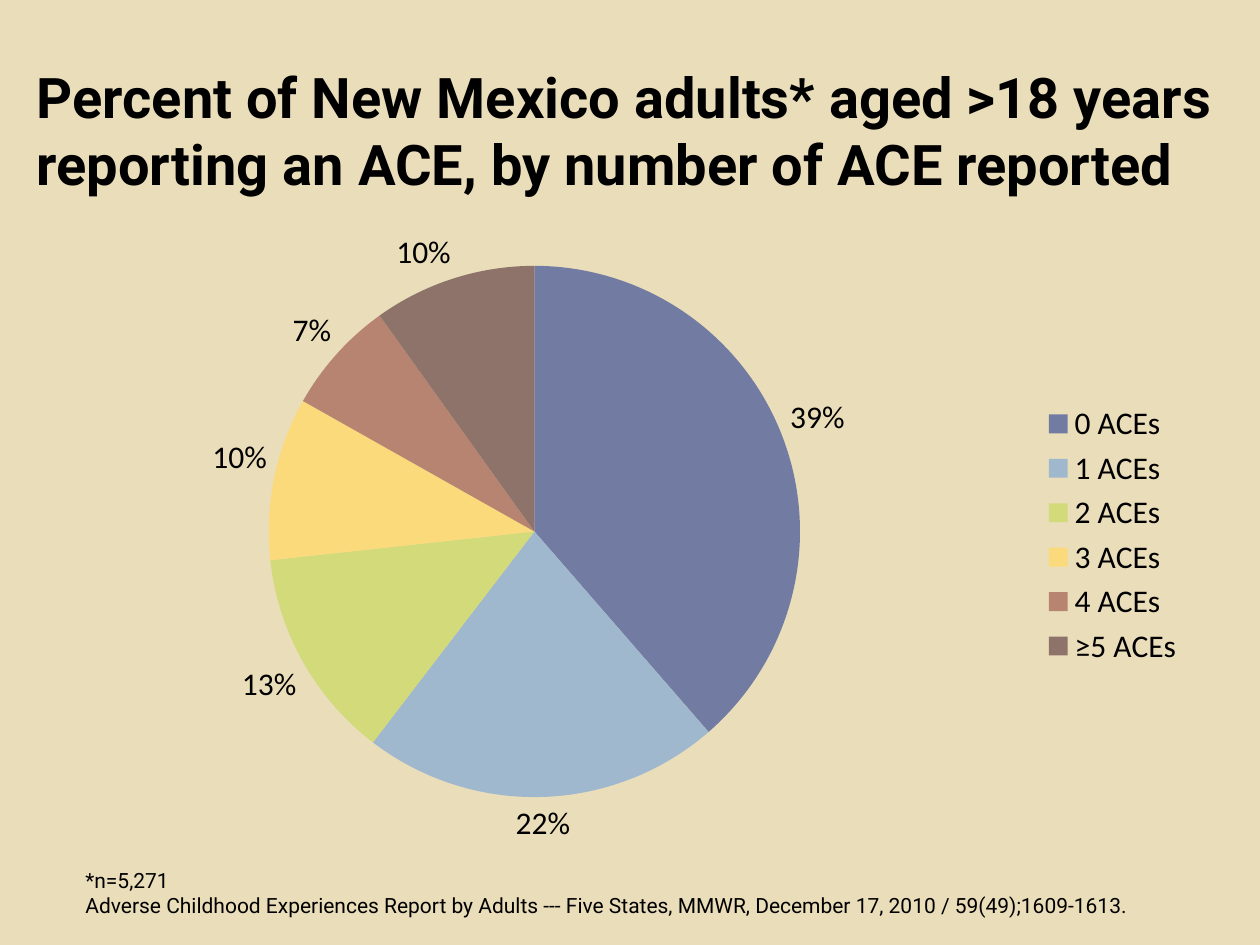
"""Build a slide with a pie chart of adverse childhood experiences in New Mexico."""
from dataclasses import dataclass

from pptx import Presentation
from pptx.chart.data import CategoryChartData
from pptx.dml.color import RGBColor
from pptx.enum.chart import XL_CHART_TYPE, XL_LABEL_POSITION, XL_LEGEND_POSITION
from pptx.enum.text import MSO_ANCHOR, MSO_AUTO_SIZE, PP_ALIGN
from pptx.util import Emu, Pt

PIE = XL_CHART_TYPE.PIE
OUTSIDE_END = XL_LABEL_POSITION.OUTSIDE_END
LEGEND_RIGHT = XL_LEGEND_POSITION.RIGHT
TOP, BOTTOM = MSO_ANCHOR.TOP, MSO_ANCHOR.BOTTOM
NO_FIT = MSO_AUTO_SIZE.NONE
LEFT = PP_ALIGN.LEFT

TITLE = "Percent of New Mexico adults* aged >18 years reporting an ACE, by number of ACE reported"
SOURCE_LINES = [
    "*n=5,271",
    "Adverse Childhood Experiences Report by Adults --- Five States, MMWR, "
    "December 17, 2010 / 59(49);1609-1613.",
]
SLICES = [
    ("0 ACEs", 0.39, "727CA3"),
    ("1 ACEs", 0.22, "9FB8CD"),
    ("2 ACEs", 0.13, "D2DA7A"),
    ("3 ACEs", 0.10, "FADA7A"),
    ("4 ACEs", 0.07, "B88472"),
    ("≥5 ACEs", 0.10, "8E736A"),
]

PX = 914400 // 126
PAGE_SIZE = (1260, 945)
TITLE_AREA = (24, 1, 1217, 202)
CHART_AREA = (24, 210, 1173, 650)
SOURCE_AREA = (73, 861, 1124, 63)


@dataclass(frozen=True)
class Theme:
    background: str = "EADDBA"
    ink: str = "000000"
    text_font: str = "Roboto"
    chart_font: str = "Calibri"
    title_size: int = 32
    chart_size: int = 18
    source_size: int = 12


THEME = Theme()


def scale(lengths):
    return [Emu(length * PX) for length in lengths]


def format_font(font, name, size, bold=False):
    font.name = name
    font.size = Pt(size)
    font.bold = bold
    font.color.rgb = RGBColor.from_string(THEME.ink)


def paint(fill, color):
    fill.solid()
    fill.fore_color.rgb = RGBColor.from_string(color)


def write(box, lines, area, size, bold=False, anchor=TOP):
    box.left, box.top, box.width, box.height = scale(area)
    frame = box.text_frame
    frame.word_wrap = True
    frame.auto_size = NO_FIT
    frame.vertical_anchor = anchor
    frame.text = "\n".join(lines)
    for paragraph in frame.paragraphs:
        paragraph.alignment = LEFT
        for span in paragraph.runs:
            format_font(span.font, THEME.text_font, size, bold)


def add_pie(page):
    names, values, colors = zip(*SLICES)
    data = CategoryChartData(number_format="0%")
    data.categories = names
    data.add_series("Series 1", values)
    chart = page.shapes.add_chart(PIE, *scale(CHART_AREA), data).chart
    format_font(chart.font, THEME.chart_font, THEME.chart_size)
    chart.has_title = False
    chart.has_legend = True
    chart.legend.position = LEGEND_RIGHT
    chart.legend.include_in_layout = False

    plot = chart.plots[0]
    plot.vary_by_categories = True
    plot.has_data_labels = True
    labels = plot.data_labels
    labels.show_value = True
    labels.show_percentage = False
    labels.number_format = "0%"
    labels.number_format_is_linked = False
    labels.position = OUTSIDE_END
    for index, color in enumerate(colors):
        paint(plot.series[0].points[index].format.fill, color)


def main():
    deck = Presentation()
    deck.slide_width, deck.slide_height = scale(PAGE_SIZE)
    page = deck.slides.add_slide(deck.slide_layouts.get_by_name("Title Only"))
    paint(page.background.fill, THEME.background)
    write(page.shapes.title, [TITLE], TITLE_AREA, THEME.title_size, bold=True, anchor=BOTTOM)
    add_pie(page)
    source_box = page.shapes.add_textbox(*scale(SOURCE_AREA))
    write(source_box, SOURCE_LINES, SOURCE_AREA, THEME.source_size)
    deck.save("out.pptx")


if __name__ == "__main__":
    main()
